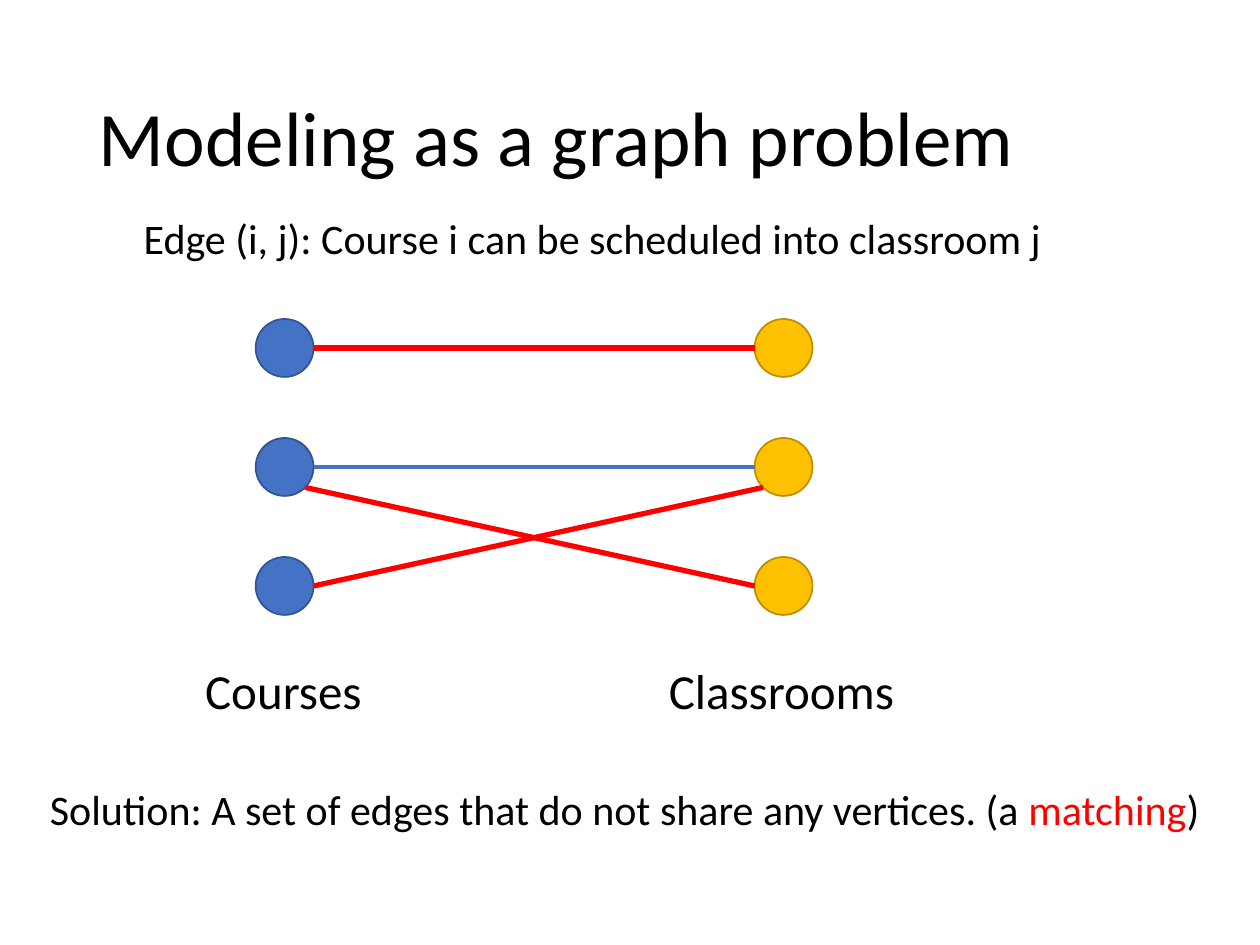
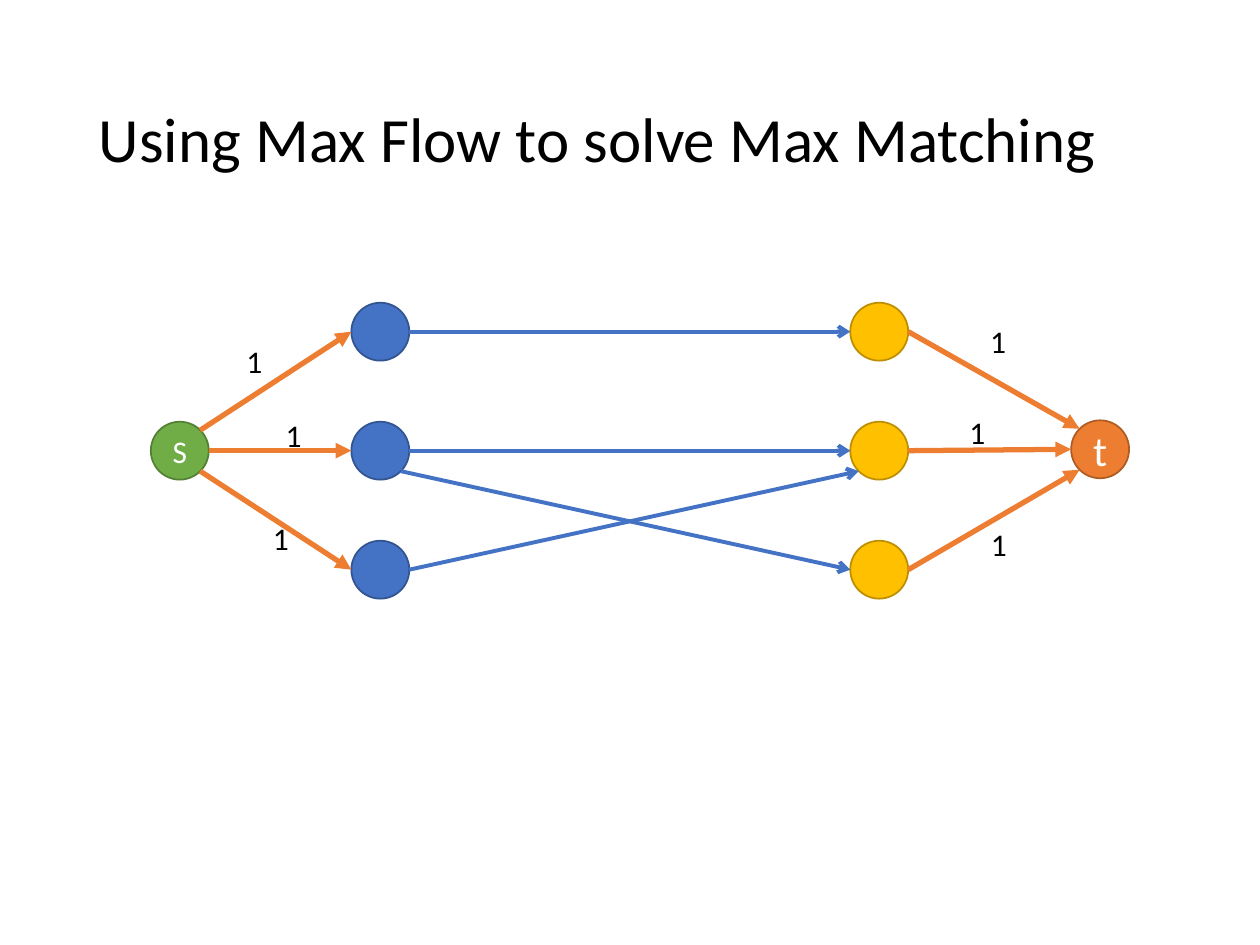
import math

import pptx
import pptx.dml.color
import pptx.enum.shapes
import pptx.enum.text
import pptx.oxml
import pptx.oxml.ns
import pptx.util

Pt = pptx.util.Pt
Color = pptx.dml.color.RGBColor.from_string
Anchor = pptx.enum.text.MSO_ANCHOR
Align = pptx.enum.text.PP_ALIGN
AutoSize = pptx.enum.text.MSO_AUTO_SIZE

# Theme: colours, type sizes and line styles
THEME = {
    "font": "Calibri",
    "text": "000000",
    "accent": "FF0000",
    "on_node": "FFFFFF",
    "sizes": {"title": 44, "long_title": 36, "caption": 28, "body": 24, "label": 18},
    # fill, outline
    "nodes": {
        "course": ("4472C4", "325491"),
        "classroom": ("FFC000", "BD8E00"),
        "source": ("70AD47", "538035"),
        "sink": ("ED7D31", "AF5C24"),
    },
    # colour, width, arrowhead
    "edges": {
        "possible": ("4472C4", 2.25, None),
        "matched": ("FF0000", 3, None),
        "directed": ("4472C4", 2.25, "arrow"),
        "capacity": ("ED7D31", 3, "triangle"),
    },
}

# Formats of the text frames
TITLE_FRAME = {"word_wrap": True, "vertical_anchor": Anchor.MIDDLE}
LINE_FRAME = {"word_wrap": False, "auto_size": AutoSize.SHAPE_TO_FIT_TEXT}
LABEL_FRAME = {"word_wrap": True, "auto_size": AutoSize.SHAPE_TO_FIT_TEXT}
NODE_FRAME = {"word_wrap": True, "vertical_anchor": Anchor.MIDDLE}

# Node grid: three rows, courses on the left and classrooms on the right
NODE_SIZE = 33.1
ROW_PITCH = 68
COLUMN_PITCH = 285.1

# Points on the rim of a node, as angles clockwise from the right
RIM = {"right": 0, "lower right": 45, "lower left": 135, "left": 180,
       "upper left": 225, "upper right": 315}

# Course-classroom pairs: (course row, side, classroom row, side)
PAIRS = [
    (0, "right", 0, "left"),
    (1, "right", 1, "left"),
    (1, "lower right", 2, "left"),
    (2, "right", 1, "lower left"),
]
MATCHING = [PAIRS[0], PAIRS[2], PAIRS[3]]

# Each slide: title, grid origin, end nodes, edge sets and text boxes
SLIDES = [
    {
        "title": ("Modeling as a graph problem", "title"),
        "origin": (146.1, 182.3),
        "ends": [],
        "pairs": [("possible", PAIRS), ("matched", MATCHING)],
        "capacities": [],
        "texts": [
            ((110.2, 373.7, 105, 41), "caption", LINE_FRAME, ["Courses"]),
            ((375.1, 373.7, 145, 41), "caption", LINE_FRAME, ["Classrooms"]),
            ((75, 118.1, 532, 36), "body", LINE_FRAME,
             ["Edge (i, j): Course i can be scheduled into classroom j"]),
            ((21.4, 444.2, 677.5, 36), "body", LINE_FRAME,
             ["Solution: A set of edges that do not share any vertices. (a ",
              "matching", ")"]),
        ],
    },
    {
        "title": ("Using Max Flow to solve Max Matching", "long_title"),
        "origin": (200.8, 173),
        # kind, left, top, letter, type size
        "ends": [("source", 86.2, 241, "S", "label"),
                 ("sink", 612.1, 240.2, "t", "body")],
        "pairs": [("directed", PAIRS)],
        # row, side of the source, side of the sink
        "capacities": [(0, "upper right", "upper left"),
                       (1, "right", "left"),
                       (2, "lower right", "lower left")],
        "texts": [((left, top, 24, 29), "label", LABEL_FRAME, ["1"])
                  for left, top in [(133.7, 191.7), (156.2, 234.3), (148.8, 293.2),
                                    (558.7, 180.2), (546.9, 232.6), (559.2, 296.2)]],
    },
]


def fill_text(shape, runs, size, frame_format, color=THEME["text"], **paragraph_format):
    """Write one paragraph; every second run is in the accent colour."""
    for name, value in frame_format.items():
        setattr(shape.text_frame, name, value)
    paragraph = shape.text_frame.paragraphs[0]
    for name, value in paragraph_format.items():
        setattr(paragraph, name, value)
    for index, text in enumerate(runs):
        run = paragraph.add_run()
        run.text = text
        font_format = {"name": THEME["font"], "size": Pt(THEME["sizes"][size])}
        for name, value in font_format.items():
            setattr(run.font, name, value)
        run.font.color.rgb = Color(THEME["accent"] if index % 2 else color)


def rim_point(corner, side):
    """Give the place on the rim of the node whose box starts at corner."""
    angle = math.radians(RIM[side])
    radius = NODE_SIZE / 2
    return (Pt(corner[0] + radius * (1 + math.cos(angle))),
            Pt(corner[1] + radius * (1 + math.sin(angle))))


presentation = pptx.Presentation()
presentation.slide_width = Pt(720)
presentation.slide_height = Pt(540)

for content in SLIDES:
    slide = presentation.slides.add_slide(presentation.slide_layouts[6])

    # Title
    title, title_size = content["title"]
    box = slide.shapes.add_textbox(Pt(49.5), Pt(28.75), Pt(621), Pt(104.4))
    fill_text(box, [title], title_size, TITLE_FRAME, line_spacing=0.9)

    # Nodes
    left, top = content["origin"]
    corners = {}
    nodes = []
    for column, kind in enumerate(["course", "classroom"]):
        for row in range(3):
            corners[kind, row] = (left + column * COLUMN_PITCH, top + row * ROW_PITCH)
            nodes.append((kind, *corners[kind, row], None, None))
    for end in content["ends"]:
        corners[end[0]] = end[1:3]
        nodes.append(end)
    for kind, node_left, node_top, letter, letter_size in nodes:
        fill, outline = THEME["nodes"][kind]
        node = slide.shapes.add_shape(
            pptx.enum.shapes.MSO_SHAPE.OVAL,
            Pt(node_left), Pt(node_top), Pt(NODE_SIZE), Pt(NODE_SIZE))
        node.shadow.inherit = False
        node.fill.solid()
        node.fill.fore_color.rgb = Color(fill)
        node.line.color.rgb = Color(outline)
        node.line.width = Pt(1)
        if letter:
            fill_text(node, [letter], letter_size, NODE_FRAME,
                      color=THEME["on_node"], alignment=Align.CENTER)

    # Edges
    edges = []
    for style, pairs in content["pairs"]:
        for course, start_side, classroom, end_side in pairs:
            edges.append((style, corners["course", course], start_side,
                          corners["classroom", classroom], end_side))
    for row, source_side, sink_side in content["capacities"]:
        edges.append(("capacity", corners["source"], source_side,
                      corners["course", row], "left"))
        edges.append(("capacity", corners["classroom", row], "right",
                      corners["sink"], sink_side))
    for style, start, start_side, end, end_side in edges:
        color, width, arrowhead = THEME["edges"][style]
        edge = slide.shapes.add_connector(
            pptx.enum.shapes.MSO_CONNECTOR.STRAIGHT,
            *rim_point(start, start_side), *rim_point(end, end_side))
        edge.line.color.rgb = Color(color)
        edge.line.width = Pt(width)
        properties = edge.element.spPr
        namespace = pptx.oxml.ns.nsdecls("a")
        if arrowhead:
            properties.find(pptx.oxml.ns.qn("a:ln")).append(
                pptx.oxml.parse_xml(f'<a:tailEnd {namespace} type="{arrowhead}"/>'))
        properties.append(pptx.oxml.parse_xml(f"<a:effectLst {namespace}/>"))

    # Captions and edge labels
    for place, size, frame_format, runs in content["texts"]:
        box = slide.shapes.add_textbox(*map(Pt, place))
        fill_text(box, runs, size, frame_format)

presentation.save("out.pptx")
